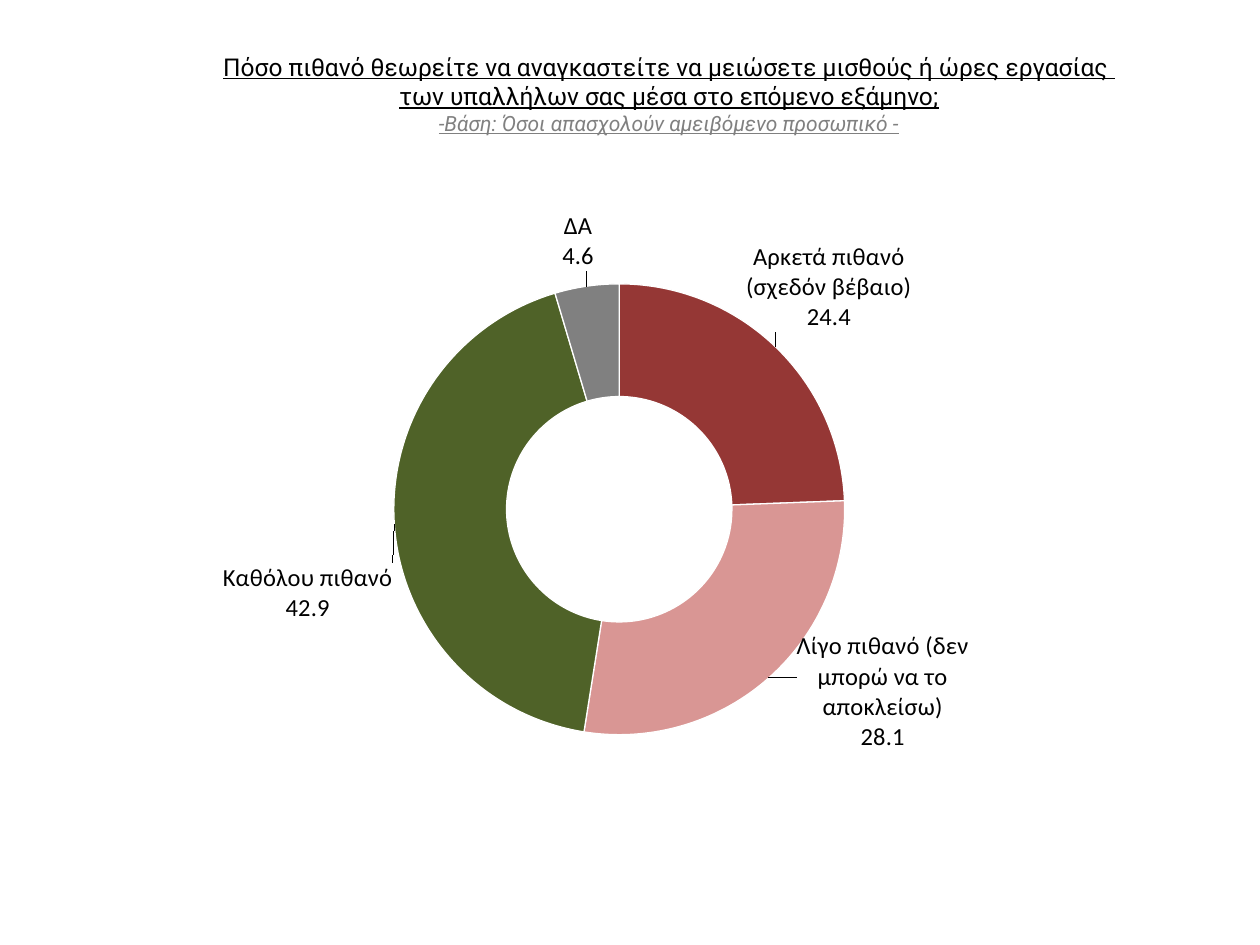
from lxml.etree import SubElement
from pptx import Presentation
from pptx.chart.data import CategoryChartData
from pptx.dml.color import RGBColor
from pptx.enum.chart import XL_CHART_TYPE
from pptx.enum.text import MSO_ANCHOR, PP_ALIGN
from pptx.oxml.ns import qn
from pptx.util import Inches, Pt

WIDE, HIGH = Inches(10), Inches(7.5)
HUES = {"ink": "000000", "gray": "808080", "red": "953735",
        "pink": "D99694", "green": "4F6228", "white": "FFFFFF"}
SLICES = [
    ("Αρκετά πιθανό (σχεδόν βέβαιο)", 24.4, "red", 0.11, -0.18),
    ("Λίγο πιθανό (δεν μπορώ να το αποκλείσω)", 28.1, "pink", 0.18, 0.1),
    ("Καθόλου πιθανό", 42.9, "green", -0.17, 0.13),
    ("ΔΑ", 4.6, "gray", -0.02, -0.18),
]
ASK = ["Πόσο πιθανό θεωρείτε να αναγκαστείτε να μειώσετε μισθούς ή ώρες εργασίας ",
       "των υπαλλήλων σας μέσα στο επόμενο εξάμηνο;"]
BASE = "-Βάση: Όσοι απασχολούν αμειβόμενο προσωπικό -"


def hue(name):
    return RGBColor.from_string(HUES[name])


def place(left, top, wide, high):
    return (int(WIDE * left), int(HIGH * top),
            int(WIDE * wide), int(HIGH * high))


def style(font, face, size, tone):
    font.name, font.size = face, Pt(size)
    font.color.rgb = hue(tone)


def add_run(para, text, size, tone, slant=False):
    run = para.add_run()
    run.text = text
    style(run.font, "Roboto", size, tone)
    run.font.underline = True
    run.font.italic = slant


def add_title(slide):
    frame = slide.shapes.add_textbox(*place(0.125, 0.048, 0.812, 0.043)).text_frame
    frame.word_wrap = True
    frame.vertical_anchor = MSO_ANCHOR.TOP
    para = frame.paragraphs[0]
    para.alignment = PP_ALIGN.CENTER
    for line in ASK:
        add_run(para, line, 14, "ink")
        para.add_line_break()
    add_run(para, BASE, 12, "gray", True)


def set_layout(node, spot, **parts):
    for old in node.findall(qn("c:layout")):
        node.remove(old)
    layout = SubElement(node, qn("c:layout"))
    node.insert(spot, layout)
    manual = SubElement(layout, qn("c:manualLayout"))
    for tag, val in parts.items():
        SubElement(manual, qn("c:" + tag)).set("val", str(val))


def add_label(series, index, dx, dy):
    style(series.points[index].data_label.font, "Calibri", 14, "ink")
    node = series._element.findall(".//" + qn("c:dLbl"))[index]
    set_layout(node, 1, x=dx, y=dy)
    form = SubElement(node, qn("c:numFmt"))
    form.set("formatCode", "0.0")
    form.set("sourceLinked", "0")
    node.insert(2, form)
    for tag in ("showVal", "showCatName"):
        node.find(qn("c:" + tag)).set("val", "1")
    SubElement(node, qn("c:separator")).text = "\n"


def add_ring(slide):
    data = CategoryChartData(number_format="0.0")
    data.categories = [row[0] for row in SLICES]
    data.add_series("Series 1", [row[1] for row in SLICES])
    chart = slide.shapes.add_chart(
        XL_CHART_TYPE.DOUGHNUT, *place(0.161, 0.204, 0.667, 0.592), data).chart
    chart.has_title = chart.has_legend = False
    style(chart.font, "Vollkorn", 18, "ink")
    plot = chart.plots[0]
    plot.vary_by_categories = True
    area = chart._chartSpace.find(".//" + qn("c:plotArea"))
    set_layout(area, 0, layoutTarget="inner", xMode="edge", yMode="edge",
               x=0.227, y=0.163, w=0.537, h=0.806)
    series = plot.series[0]
    labels = series.data_labels
    style(labels.font, "Calibri", 14, "ink")
    labels.number_format = "0.0"
    labels.number_format_is_linked = False
    labels.show_value = labels.show_category_name = True
    for index, (_, _, tone, dx, dy) in enumerate(SLICES):
        form = series.points[index].format
        form.fill.solid()
        form.fill.fore_color.rgb = hue(tone)
        form.line.color.rgb = hue("white")
        form.line.width = Pt(0.75)
        add_label(series, index, dx, dy)


def main():
    deck = Presentation()
    deck.slide_width, deck.slide_height = WIDE, HIGH
    slide = deck.slides.add_slide(deck.slide_layouts[6])
    add_title(slide)
    add_ring(slide)
    deck.save("out.pptx")


if __name__ == "__main__":
    main()
